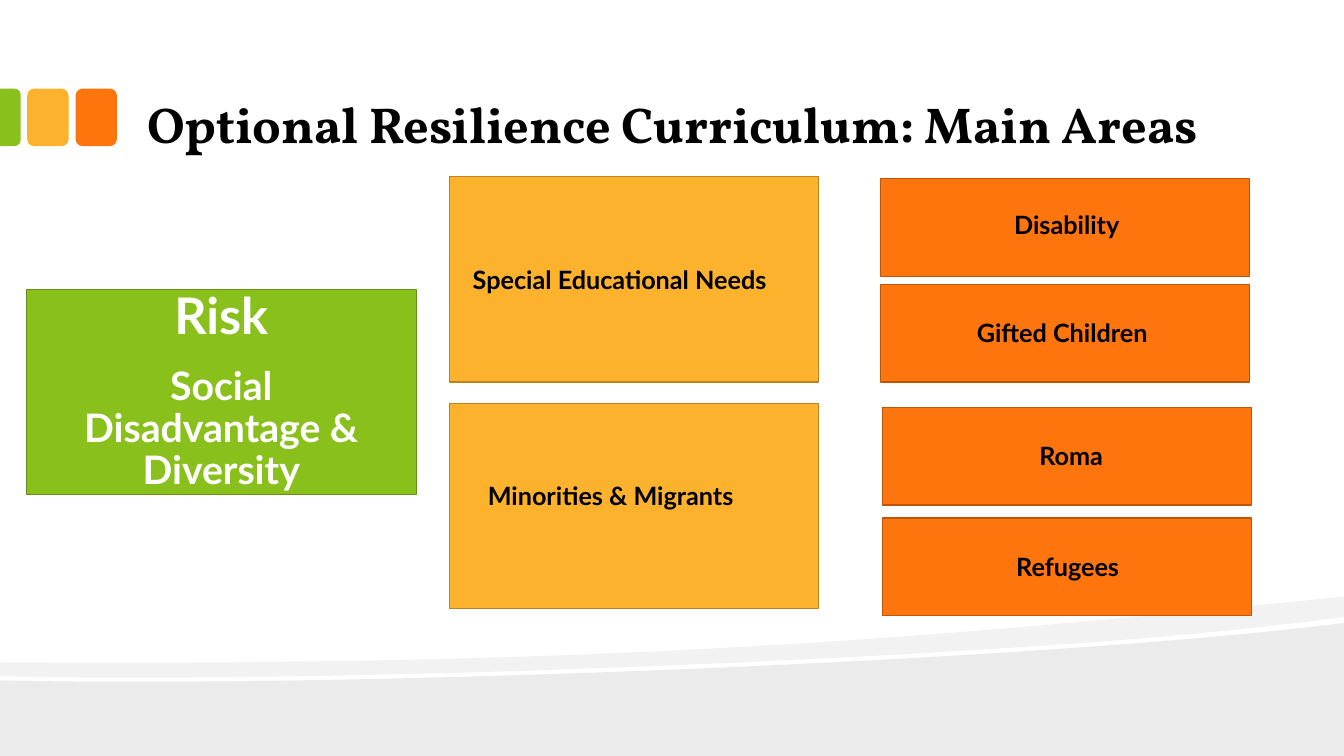
from lxml.etree import SubElement
from pptx import Presentation
from pptx.dml.color import RGBColor
from pptx.enum.shapes import MSO_SHAPE
from pptx.enum.text import MSO_ANCHOR, PP_ALIGN
from pptx.oxml.ns import qn
from pptx.util import Inches, Pt

COLORS = {
    "black": "000000", "white": "FFFFFF",
    "green": "89C01C", "green_edge": "658E15",
    "yellow": "FCB22C", "yellow_edge": "BA8421",
    "orange": "FE750E", "orange_edge": "BC570A",
}
TITLE = {"name": "Vollkorn", "size": Pt(36), "bold": True}
LABEL = {"name": "Lato", "size": Pt(18), "bold": True}
RISK = {"name": "Lato", "size": Pt(36), "bold": True}
RISK_DETAIL = {"name": "Lato", "size": Pt(28), "bold": True}


def rgb(name):
    return RGBColor.from_string(COLORS[name])


def set_attrs(target, values):
    for name, value in values.items():
        setattr(target, name, value)


def paint(sp, fill, edge=None):
    sp.shadow.inherit = False
    sp.fill.solid()
    sp.fill.fore_color.rgb = rgb(fill)
    if edge:
        sp.line.color.rgb = rgb(edge)
        sp.line.width = Pt(0.85)
    else:
        sp.line.fill.background()


def add_box(s, box, fill, edge=None, kind=MSO_SHAPE.RECTANGLE):
    sp = s.shapes.add_shape(kind, *map(Inches, box))
    paint(sp, fill, edge)
    return sp


def write(p, text, font, color, **layout):
    set_attrs(p, layout)
    r = p.add_run()
    r.text = text
    set_attrs(r.font, font)
    r.font.color.rgb = rgb(color)


def curve(p0, p1, p2, p3, steps=32):
    def point(t):
        weights = ((1 - t) ** 3, 3 * t * (1 - t) ** 2, 3 * t * t * (1 - t), t ** 3)
        return tuple(sum(w * q[i] for w, q in zip(weights, (p0, p1, p2, p3)))
                     for i in (0, 1))
    return [point(n / steps) for n in range(steps + 1)]


def add_wave(s, points, opacity):
    scaled = [(Inches(x), Inches(y)) for x, y in points]
    builder = s.shapes.build_freeform(*scaled[0])
    builder.add_line_segments(scaled[1:], close=True)
    sp = builder.convert_to_shape()
    paint(sp, "black")
    color = sp.fill._xPr.find(qn("a:solidFill"))[0]
    SubElement(color, qn("a:alpha")).set("val", str(opacity * 1000))


def add_waves(s, width, height):
    lower = curve((0, 6.75), (3.52, 6.83), (10.42, 6.55), (width, 6.18))
    add_wave(s, lower + [(width, height), (0, height)], 8)
    upper = curve((0, 6.57), (6.52, 6.62), (9.71, 6.27), (width, 5.92))
    upper += curve((width, 6.12), (12.55, 6.23), (11.49, 6.33), (10.29, 6.41))
    upper += curve((10.29, 6.41), (6.98, 6.63), (2.58, 6.77), (0, 6.71))
    add_wave(s, upper, 5)


def add_tabs(s, left, top, width, height):
    for n, fill in enumerate(("yellow", "orange")):
        add_box(s, (left + 0.27 + n * 0.48, top, width, height), fill,
                kind=MSO_SHAPE.ROUNDED_RECTANGLE)
    half = width / 2
    sp = add_box(s, (left + (half - height) / 2, top + (height - half) / 2, height, half),
                 "green", kind=MSO_SHAPE.ROUND_2_SAME_RECTANGLE)
    sp.adjustments[0] = 0.29
    sp.rotation = 90


def add_title(s, box, text):
    tf = s.shapes.add_textbox(*map(Inches, box)).text_frame
    set_attrs(tf, {"word_wrap": True, "vertical_anchor": MSO_ANCHOR.BOTTOM,
                   "margin_left": Inches(0.13), "margin_right": Inches(0.13),
                   "margin_top": Inches(0.07), "margin_bottom": Inches(0.07)})
    write(tf.paragraphs[0], text, TITLE, "black")


def add_risk(s, box):
    tf = add_box(s, box, "green", "green_edge").text_frame
    set_attrs(tf, {"word_wrap": True, "vertical_anchor": MSO_ANCHOR.MIDDLE,
                   "margin_left": Inches(0.27), "margin_right": Inches(0.27),
                   "margin_top": 0, "margin_bottom": 0})
    layout = {"alignment": PP_ALIGN.CENTER, "line_spacing": 0.9}
    write(tf.paragraphs[0], "Risk", RISK, "white", space_after=Pt(15), **layout)
    write(tf.add_paragraph(), "Social Disadvantage & Diversity", RISK_DETAIL,
          "white", **layout)


def add_area(s, box, fill, text, dx, dy, label_width):
    left, top = box[:2]
    add_box(s, box, fill, fill + "_edge")
    tf = add_box(s, (left + dx, top + dy, label_width, 0.4), fill).text_frame
    set_attrs(tf, {"word_wrap": True, "vertical_anchor": MSO_ANCHOR.TOP})
    write(tf.paragraphs[0], text, LABEL, "black", alignment=PP_ALIGN.LEFT)


def add_areas(s, left, top):
    width = 3.66
    groups = (
        (0, "Special Educational Needs", 0.13, 0.82, 3.52),
        (2.25, "Minorities & Migrants", 0.28, 0.72, 2.93),
    )
    topics = (
        (4.27, 0.02, "Disability", 1.23, 0.26, 1.39),
        (4.27, 1.07, "Gifted Children", 0.86, 0.28, 2.11),
        (4.29, 2.29, "Roma", 1.46, 0.28, 0.93),
        (4.29, 3.39, "Refugees", 1.23, 0.28, 1.39),
    )
    for y, *label in groups:
        add_area(s, (left, top + y, width, 2.04), "yellow", *label)
    for x, y, *label in topics:
        add_area(s, (left + x, top + y, width, 0.97), "orange", *label)


def main():
    prs = Presentation()
    prs.slide_width, prs.slide_height = Inches(13.33), Inches(7.5)
    s = prs.slides.add_slide(prs.slide_layouts[6])
    add_waves(s, 13.33, 7.5)
    add_tabs(s, 0, 0.88, 0.41, 0.57)
    add_title(s, (1.33, 0.17, 11.32, 1.42), "Optional Resilience Curriculum: Main Areas")
    add_risk(s, (0.26, 2.87, 3.87, 2.04))
    add_areas(s, 4.46, 1.75)
    prs.save("out.pptx")


if __name__ == "__main__":
    main()
